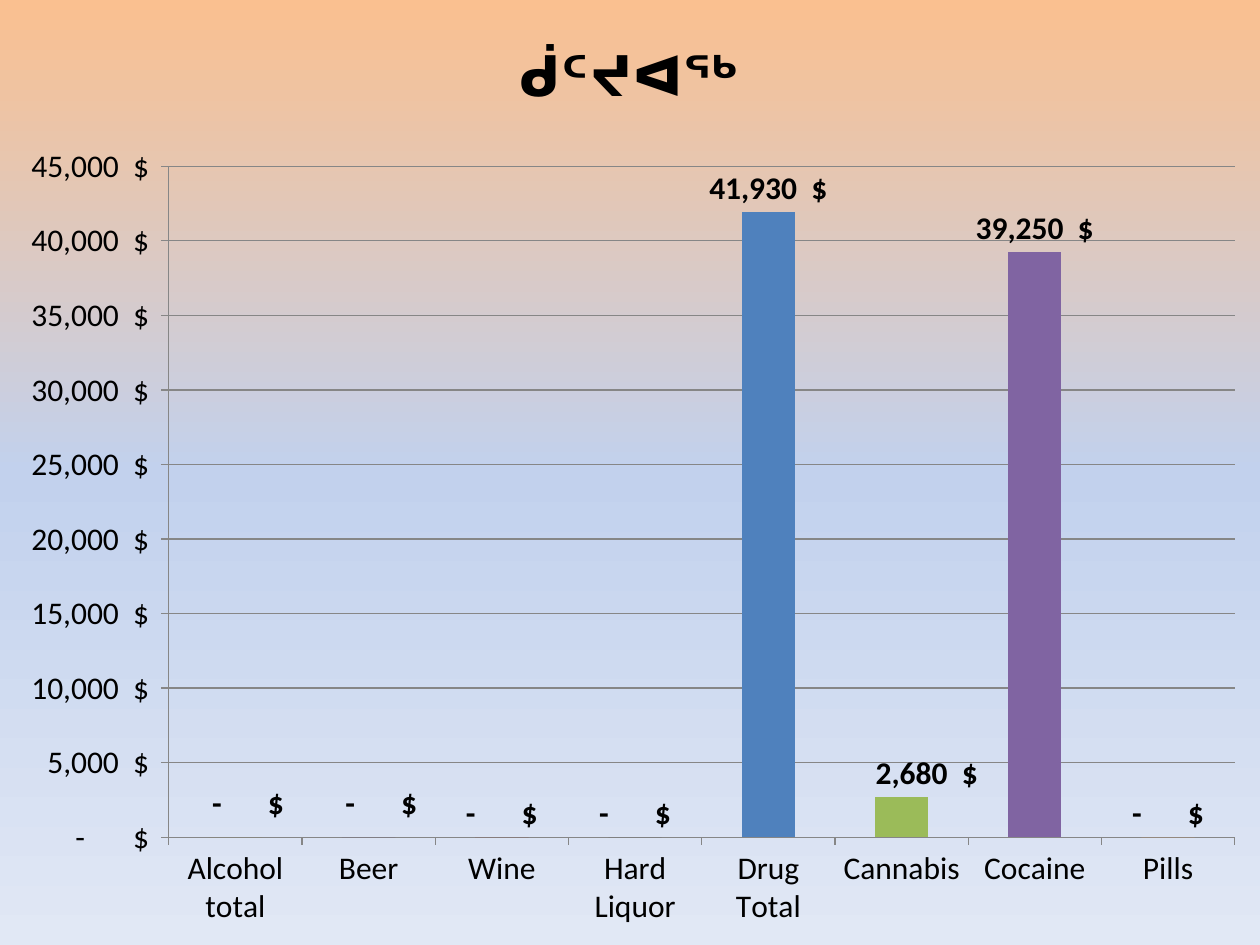
import copy

import lxml.etree
import pptx
import pptx.chart.data
import pptx.dml.color
import pptx.enum.chart
import pptx.oxml
import pptx.oxml.ns
import pptx.util

FONT = "Calibri"
TITLE = "ᑰᑦᔪᐊᖅ"
MONEY = r'_ * #,##0_)\ "$"_ ;_ * \(#,##0\)\ "$"_ ;_ * "-"??_)\ "$"_ ;_ @_ '
COLORS = {
    "text": "000000", "line": "868686", "blue": "4F81BD", "tan": "948A54",
    "violet": "604A7B", "red": "953735", "gray": "595959", "green": "9BBB59",
    "purple": "8064A2", "orange": "F79646",
    "sky_top": "FAC090", "sky_middle": "C2D1ED", "sky_bottom": "E1E8F5",
}
SKY = ["sky_top", "sky_middle", "sky_bottom"]
SEIZURES = [
    ("Alcohol total", 0, "tan"),
    ("Beer", 0, "violet"),
    ("Wine", 0, "red"),
    ("Hard Liquor", 0, "gray"),
    ("Drug Total", 41930, "blue"),
    ("Cannabis", 2680, "green"),
    ("Cocaine", 39250, "purple"),
    ("Pills", 0, "orange"),
]
LABEL_SHIFTS = {0: {"x": 0.01, "y": -0.01}, 1: {"x": 0.01, "y": -0.01},
                2: {"x": 0, "y": 0}, 5: {"x": 0.02, "y": 0}}
PLOT_FRAME = {"layoutTarget": "inner", "xMode": "edge", "yMode": "edge",
              "x": 0.134, "y": 0.176, "w": 0.846, "h": 0.71}


def rgb(name):
    """Return the named colour."""
    return pptx.dml.color.RGBColor.from_string(COLORS[name])


def style_font(font, size=18, bold=False):
    """Apply the slide's typeface to a font."""
    font.name, font.size, font.bold = FONT, pptx.util.Pt(size), bold
    font.color.rgb = rgb("text")


def write_text(frame, text, **style):
    """Put formatted text into a text frame."""
    run = frame.paragraphs[0].add_run()
    run.text = text
    style_font(run.font, **style)


def manual_layout(settings):
    """Build a chart layout element from its settings."""
    qn = pptx.oxml.ns.qn
    layout = pptx.oxml.parse_xml(f"<c:layout {pptx.oxml.ns.nsdecls('c')}/>")
    manual = lxml.etree.SubElement(layout, qn("c:manualLayout"))
    for key, value in settings.items():
        lxml.etree.SubElement(manual, qn(f"c:{key}")).set("val", str(value))
    return layout


def paint_background(slide):
    """Fill the background with evenly spaced gradient stops."""
    fill = slide.background.fill
    fill.gradient()
    fill.gradient_angle = 270
    stop_list = slide.element.xpath(".//a:gsLst")[0]
    stop_list.insert(1, copy.deepcopy(stop_list[0]))
    for index, (stop, name) in enumerate(zip(fill.gradient_stops, SKY)):
        stop.position = index / (len(SKY) - 1)
        stop.color.rgb = rgb(name)


def style_axes(chart):
    """Format both axes and the gridlines."""
    value_axis = chart.value_axis
    value_axis.minimum_scale, value_axis.maximum_scale = 0, 45000
    value_axis.major_unit = 5000
    value_axis.has_major_gridlines = True
    value_axis.tick_labels.number_format = MONEY
    value_axis.tick_labels.number_format_is_linked = False
    for axis in (chart.category_axis, value_axis):
        axis.major_tick_mark = pptx.enum.chart.XL_TICK_MARK.OUTSIDE
        style_font(axis.tick_labels.font)
    for part in (chart.category_axis, value_axis, value_axis.major_gridlines):
        part.format.line.color.rgb = rgb("line")
        part.format.line.width = pptx.util.Pt(0.75)


def style_columns(series):
    """Colour each column and place its label."""
    outside = pptx.enum.chart.XL_LABEL_POSITION.OUTSIDE_END
    series.format.fill.solid()
    series.format.fill.fore_color.rgb = rgb("blue")
    labels = series.data_labels
    labels.show_value = True
    labels.number_format = MONEY
    labels.number_format_is_linked = False
    labels.position = outside
    style_font(labels.font, bold=True)
    for index, (_, _, color) in enumerate(SEIZURES):
        fill = series.points[index].format.fill
        fill.solid()
        fill.fore_color.rgb = rgb(color)
    number_format = labels._element.xpath("c:numFmt")[0]
    for index, shift in LABEL_SHIFTS.items():
        label = series.points[index].data_label
        style_font(label.font, bold=True)
        label.position = outside
        marker = labels._element.xpath(f"c:dLbl/c:idx[@val='{index}']")[0]
        marker.addnext(copy.deepcopy(number_format))
        marker.addnext(manual_layout(shift))


def add_seizure_chart(slide, width, height):
    """Add the column chart over the whole slide."""
    data = pptx.chart.data.CategoryChartData()
    data.categories = [name for name, _, _ in SEIZURES]
    data.add_series("Series 1", [value for _, value, _ in SEIZURES])
    kind = pptx.enum.chart.XL_CHART_TYPE.COLUMN_CLUSTERED
    chart = slide.shapes.add_chart(kind, 0, 0, width, height, data).chart
    style_font(chart.font)
    chart.has_legend = False
    chart.has_title = True
    write_text(chart.chart_title.text_frame, TITLE, size=32, bold=True)
    plot = chart.plots[0]
    plot.gap_width = 150
    plot.vary_by_categories = False
    style_axes(chart)
    style_columns(plot.series[0])
    plot_area = chart.element.xpath(".//c:plotArea")[0]
    for old in plot_area.xpath("c:layout"):
        plot_area.remove(old)
    plot_area.insert(0, manual_layout(PLOT_FRAME))


def main():
    """Build and save the slide."""
    deck = pptx.Presentation()
    deck.slide_width, deck.slide_height = pptx.util.Cm(25.4), pptx.util.Cm(19.05)
    slide = deck.slides.add_slide(deck.slide_layouts[6])
    paint_background(slide)
    add_seizure_chart(slide, deck.slide_width, deck.slide_height)
    deck.save("out.pptx")


if __name__ == "__main__":
    main()
